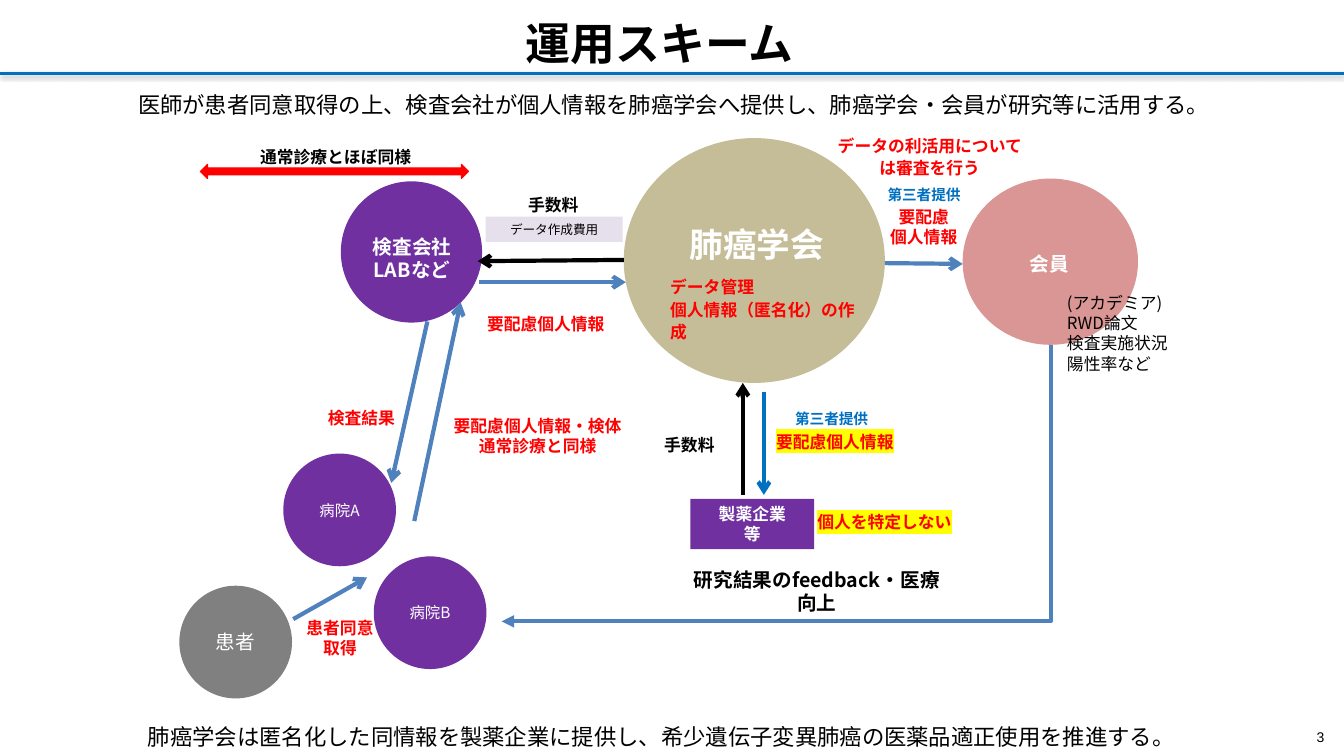
from lxml import etree
from pptx import Presentation
from pptx.dml.color import RGBColor
from pptx.enum.shapes import MSO_CONNECTOR as Line, MSO_SHAPE as Shape
from pptx.enum.text import MSO_ANCHOR as Anchor, MSO_AUTO_SIZE as AutoSize, PP_ALIGN as Align
from pptx.oxml.ns import qn
from pptx.util import Cm, Pt

COLORS = {
    "black": "000000", "white": "FFFFFF", "red": "FF0000", "yellow": "FFFF00",
    "purple": "7030A0", "lilac": "E6E0EC", "khaki": "C4BD97", "gray": "808080",
    "rose": "D99694", "steel": "4F81BD", "blue": "0070C0",
}
RGB = {name: RGBColor.from_string(value) for name, value in COLORS.items()}
FONT = "Noto Sans CJK JP"
TOP, MIDDLE, BOTTOM = Anchor.TOP, Anchor.MIDDLE, Anchor.BOTTOM
LEFT, CENTER = Align.LEFT, Align.CENTER


def write(shape, lines, size, color, bold=True, align=CENTER, anchor=BOTTOM,
          spacing=None, highlight=None, font=FONT):
    """Fill a shape with one paragraph per line of text."""
    frame = shape.text_frame
    frame.word_wrap = True
    frame.vertical_anchor = anchor
    for index, line in enumerate(lines.split("\n")):
        paragraph = frame.add_paragraph() if index else frame.paragraphs[0]
        paragraph.alignment = align
        if spacing:
            paragraph.line_spacing = spacing
        run = paragraph.add_run()
        run.text = line
        run.font.size = Pt(size)
        run.font.bold = bold
        run.font.color.rgb = RGB[color]
        run.font.name = font
        latin = run.font._element.find(qn("a:latin"))
        east_asian = etree.Element(qn("a:ea"), typeface=font)
        latin.addnext(east_asian)
        if highlight:
            marker = etree.Element(qn("a:highlight"))
            etree.SubElement(marker, qn("a:srgbClr"), val=COLORS[highlight])
            latin.addprevious(marker)


def connect(kind, ends, color, width, head=None):
    """Draw a connector without shadow and return it with its effect list."""
    connector = slide.shapes.add_connector(kind, *map(Cm, ends))
    connector.line.color.rgb = RGB[color]
    connector.line.width = Pt(width)
    if head:
        outline = connector.line._get_or_add_ln()
        etree.SubElement(outline, qn("a:tailEnd"), type=head)
    effects = etree.SubElement(connector._element.spPr, qn("a:effectLst"))
    return connector, effects


presentation = Presentation()
presentation.slide_width = Cm(33.87)
presentation.slide_height = Cm(19.05)
slide = presentation.slides.add_slide(presentation.slide_layouts[5])

# Title and the rule under it
title = slide.shapes.title
title.left, title.top, title.width, title.height = Cm(8.18), Cm(0.28), Cm(16.89), Cm(1.4)
title.text_frame.auto_size = AutoSize.NONE
write(title, "運用スキーム", 32, "black", anchor=TOP)

header_rule, header_effects = connect(Line.STRAIGHT, (0, 1.85, 33.87, 1.85), "blue", 2.25)
shadow = etree.SubElement(header_effects, qn("a:outerShdw"), blurRad="40000",
                          dist="20000", dir="5400000", rotWithShape="0")
shadow_color = etree.SubElement(shadow, qn("a:srgbClr"), val=COLORS["black"])
etree.SubElement(shadow_color, qn("a:alpha"), val="38000")

# Participants and boxes: preset, left, top, width, height, fill, text, size, text color, bold, anchor
nodes = [
    (Shape.OVAL, 8.59, 4.57, 3.56, 3.56, "purple", "", 14, "white", True, MIDDLE),
    (Shape.OVAL, 15.72, 3.48, 6.58, 6.17, "khaki", "", 24, "white", True, MIDDLE),
    (Shape.OVAL, 24.26, 4.5, 4.42, 4.19, "rose", "", 14, "white", True, MIDDLE),
    (Shape.OVAL, 4.52, 14.76, 2.84, 2.84, "gray", "患者", 14, "white", False, MIDDLE),
    (Shape.OVAL, 7.14, 11.43, 2.84, 2.84, "purple", "病院A", 11, "white", False, MIDDLE),
    (Shape.OVAL, 9.42, 14.02, 2.84, 2.84, "purple", "病院B", 11, "white", False, MIDDLE),
    (Shape.RECTANGLE, 17.4, 12.57, 3.12, 1.27, "purple", "製薬企業\n等", 12, "white", True, BOTTOM),
    (Shape.RECTANGLE, 12.24, 5.46, 3.45, 0.64, "lilac", "データ作成費用", 9, "black", False, BOTTOM),
    (Shape.LEFT_RIGHT_ARROW, 5.05, 4.14, 6.76, 0.36, "red", "", 12, "white", True, MIDDLE),
]
for preset, left, top, width, height, fill, text, size, color, bold, anchor in nodes:
    node = slide.shapes.add_shape(preset, Cm(left), Cm(top), Cm(width), Cm(height))
    node.shadow.inherit = False
    node.fill.solid()
    node.fill.fore_color.rgb = RGB[fill]
    if preset == Shape.LEFT_RIGHT_ARROW:
        node.line.color.rgb = RGB[fill]
        node.line.width = Pt(0.75)
    else:
        node.line.fill.background()
    if text:
        write(node, text, size, color, bold, anchor=anchor)

# Flows between participants
flows = [
    ((12.07, 7.11, 15.77, 7.11), "steel"),
    ((10.44, 13.13, 11.61, 7.62), "steel"),
    ((10.77, 8.1, 9.86, 12.17), "steel"),
    ((7.39, 15.6, 9.25, 14.55), "steel"),
    ((22.3, 6.63, 24.26, 6.65), "steel"),
    ((15.72, 6.55, 12.04, 6.58), "black"),
    ((18.72, 12.47, 18.72, 9.65), "black"),
    ((19.25, 9.88, 19.25, 12.47), "blue"),
]
for ends, color in flows:
    connect(Line.STRAIGHT, ends, color, 3, "arrow")

# Feedback runs down from the members, then left: a one-bend connector turned by 90 degrees
feedback, _ = connect(Line.ELBOW, (16.08, 5.26, 23.04, 19.1), "steel", 3, "triangle")
feedback._element.spPr.find(qn("a:prstGeom")).set("prst", "bentConnector2")
feedback._element.spPr.find(qn("a:xfrm")).set("rot", "5400000")

# Labels: text, left, top, width, height, size, color, formatting
plain_left = {"bold": False, "align": LEFT, "anchor": TOP}
review = {"anchor": TOP, "spacing": 1.1}
marked = {"highlight": "yellow"}
labels = [
    ("医師が患者同意取得の上、検査会社が個人情報を肺癌学会へ提供し、肺癌学会・会員が研究等に活用する。",
     3.23, 2.18, 28.02, 0.91, 16, "black", plain_left),
    ("肺癌学会は匿名化した同情報を製薬企業に提供し、希少遺伝子変異肺癌の医薬品適正使用を推進する。",
     3.48, 18.11, 26.72, 0.94, 16, "black", plain_left),
    ("検査会社\nLABなど", 8.86, 5.77, 3.05, 1.45, 14, "white", {}),
    ("肺癌学会", 16.84, 5.51, 4.47, 1.27, 24, "white", {"anchor": TOP}),
    ("データ管理\n個人情報（匿名化）の作成", 16.64, 6.81, 5.56, 1.32, 12, "red", review | {"align": LEFT}),
    ("会員", 25.7, 6.22, 1.7, 0.86, 14, "white", {"align": LEFT, "anchor": TOP}),
    ("(アカデミア)\nRWD論文\n検査実施状況\n陽性率など", 26.64, 7.11, 3.3, 2.57, 12, "black",
     plain_left | {"anchor": MIDDLE}),
    ("通常診療とほぼ同様", 6.15, 3.53, 4.62, 0.76, 12, "black", review),
    ("データの利活用については審査を行う", 20.7, 3.25, 5.46, 1.32, 12, "red", review),
    ("手数料", 12.27, 4.78, 3.35, 0.76, 12, "black", {}),
    ("手数料", 15.7, 10.82, 3.35, 0.76, 12, "black", {}),
    ("第三者提供", 22.07, 4.57, 2.44, 0.66, 10.5, "blue", {"anchor": MIDDLE}),
    ("第三者提供", 19.74, 10.21, 2.44, 0.66, 10.5, "blue", {"anchor": MIDDLE}),
    ("要配慮\n個人情報", 21.72, 5.08, 3.12, 1.27, 12, "red", {}),
    ("要配慮個人情報", 11.81, 7.77, 3.89, 0.76, 12, "red", {}),
    ("要配慮個人情報・検体\n通常診療と同様", 10.26, 10.34, 6.58, 1.27, 12, "red", {}),
    ("検査結果", 7.75, 10.16, 2.72, 0.76, 12, "red", {}),
    ("患者同意\n取得", 7.01, 15.44, 3.12, 1.27, 12, "red", {}),
    ("要配慮個人情報", 18.64, 10.74, 4.8, 0.76, 12, "red", marked),
    ("個人を特定しない", 19.89, 12.78, 4.8, 0.76, 12, "red", marked),
    ("研究結果のfeedback・医療向上", 16.99, 14.76, 7.19, 0.86, 14, "black", {}),
    ("3", 32.77, 18.14, 1.02, 0.84, 10, "black", {"bold": False, "anchor": MIDDLE, "font": "Arial"}),
]
for text, left, top, width, height, size, color, formatting in labels:
    label = slide.shapes.add_textbox(Cm(left), Cm(top), Cm(width), Cm(height))
    label.text_frame.auto_size = AutoSize.SHAPE_TO_FIT_TEXT
    write(label, text, size, color, **formatting)

presentation.save("out.pptx")
